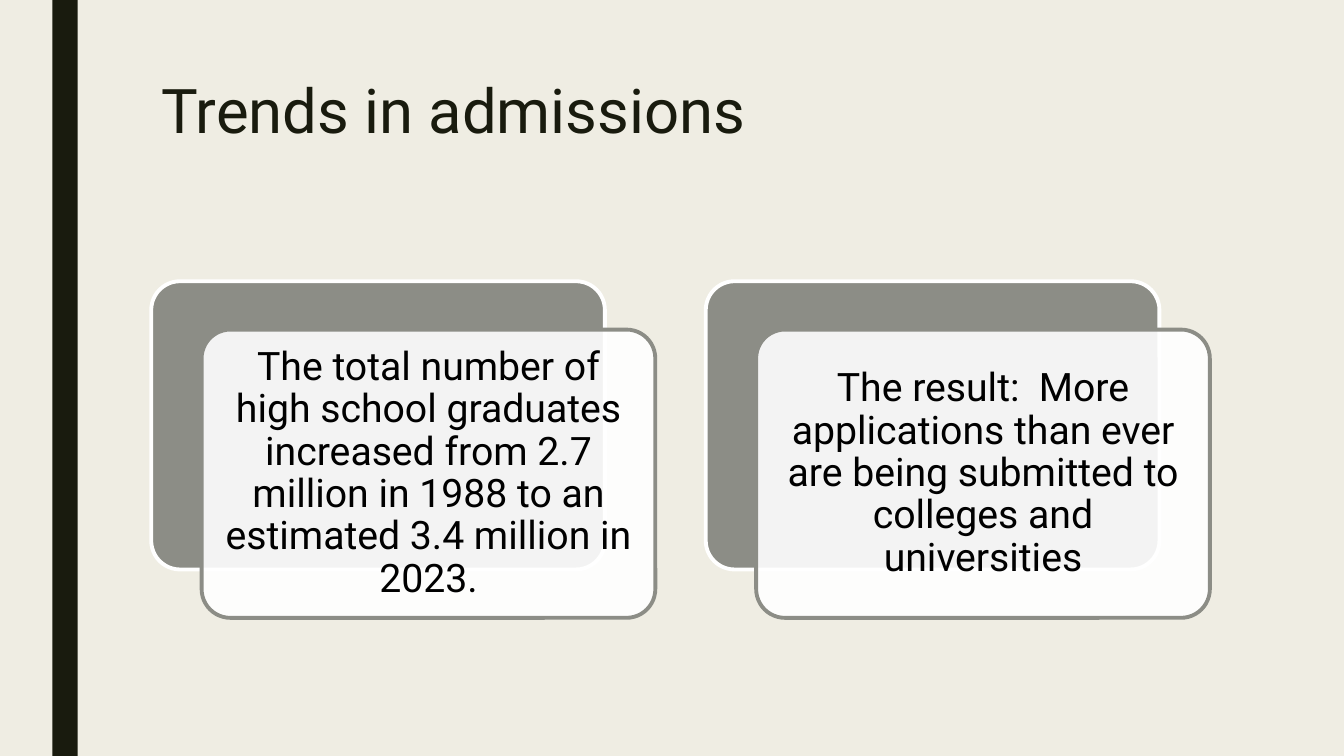
import pptx
import pptx.dml.color
import pptx.enum.shapes
import pptx.enum.text
import pptx.util
from lxml import etree
from pptx.oxml.ns import qn

Inches = pptx.util.Inches
Pt = pptx.util.Pt
Shape = pptx.enum.shapes.MSO_SHAPE
Align = pptx.enum.text.PP_ALIGN
Anchor = pptx.enum.text.MSO_ANCHOR

TRENDS = [
    "The total number of high school graduates increased from 2.7 million "
    "in 1988 to an estimated 3.4 million in 2023.",
    "The result:  More applications than ever are being submitted to "
    "colleges and universities",
]


def rgb(hex_color):
    return pptx.dml.color.RGBColor.from_string(hex_color)


class SlideBuilder:
    FONT = "Roboto"
    CREAM, INK, GRAY = "EFEDE3", "191B0E", "8C8D86"
    WHITE, BLACK = "FFFFFF", "000000"

    def __init__(self, slide):
        self.slide = slide
        background = slide.background.fill
        background.solid()
        background.fore_color.rgb = rgb(self.CREAM)

    def add_run(self, paragraph, text, size, color):
        run = paragraph.add_run()
        run.text = text
        run.font.name = self.FONT
        run.font.size = Pt(size)
        run.font.color.rgb = rgb(color)

    def title(self, text, left, top, width, height):
        heading = self.slide.shapes.title
        heading.left, heading.top = Inches(left), Inches(top)
        heading.width, heading.height = Inches(width), Inches(height)
        frame = heading.text_frame
        frame.word_wrap = True
        frame.auto_size = pptx.enum.text.MSO_AUTO_SIZE.NONE
        frame.vertical_anchor = Anchor.TOP
        paragraph = frame.paragraphs[0]
        paragraph.alignment = Align.LEFT
        paragraph.line_spacing = 0.89
        self.add_run(paragraph, text, 44, self.INK)

    def panel(self, kind, left, top, width, height, fill, border=None, opacity=100):
        """Add a filled shape; opacity is in percent."""
        panel = self.slide.shapes.add_shape(
            kind, Inches(left), Inches(top), Inches(width), Inches(height))
        panel.shadow.inherit = False
        panel.fill.solid()
        panel.fill.fore_color.rgb = rgb(fill)
        if opacity < 100:
            color = panel.fill._xPr.find(qn("a:solidFill"))[0]
            etree.SubElement(color, qn("a:alpha"), val=str(opacity * 1000))
        if border:
            panel.line.color.rgb = rgb(border)
            panel.line.width = Pt(2.75)
        else:
            panel.line.fill.background()
        if kind == Shape.ROUNDED_RECTANGLE:
            panel.adjustments[0] = 0.1

    def caption(self, text, left, top, width, height):
        caption = self.slide.shapes.add_textbox(
            Inches(left), Inches(top), Inches(width), Inches(height))
        frame = caption.text_frame
        frame.word_wrap = True
        frame.vertical_anchor = Anchor.MIDDLE
        frame.margin_left = frame.margin_right = Inches(0.12)
        frame.margin_top = frame.margin_bottom = Inches(0.12)
        paragraph = frame.paragraphs[0]
        paragraph.alignment = Align.CENTER
        paragraph.line_spacing = 0.9
        self.add_run(paragraph, text, 28, self.BLACK)

    def trend_card(self, text, left, top):
        """Add a gray panel, a white panel offset over it, and its text."""
        width, height, inset = 4.5, 2.86, 0.08
        front_left, front_top = left + 0.5, top + 0.48
        self.panel(Shape.ROUNDED_RECTANGLE, left, top, width, height,
                   self.GRAY, self.WHITE)
        self.panel(Shape.ROUNDED_RECTANGLE, front_left, front_top, width, height,
                   self.WHITE, self.GRAY, opacity=90)
        self.caption(text, front_left + inset, front_top + inset,
                     width - 2 * inset, height - 2 * inset)


def main():
    deck = pptx.Presentation()
    deck.slide_width, deck.slide_height = Inches(13.33), Inches(7.5)
    title_only = deck.slide_layouts[5]
    builder = SlideBuilder(deck.slides.add_slide(title_only))

    builder.panel(Shape.RECTANGLE, 0.52, 0, 0.25, 7.5, builder.INK)
    builder.title("Trends in admissions", 1.5, 0.75, 10.5, 1.62)
    for column, trend in enumerate(TRENDS):
        builder.trend_card(trend, 1.5 + 5.5 * column, 2.79)

    deck.save("out.pptx")


if __name__ == "__main__":
    main()
